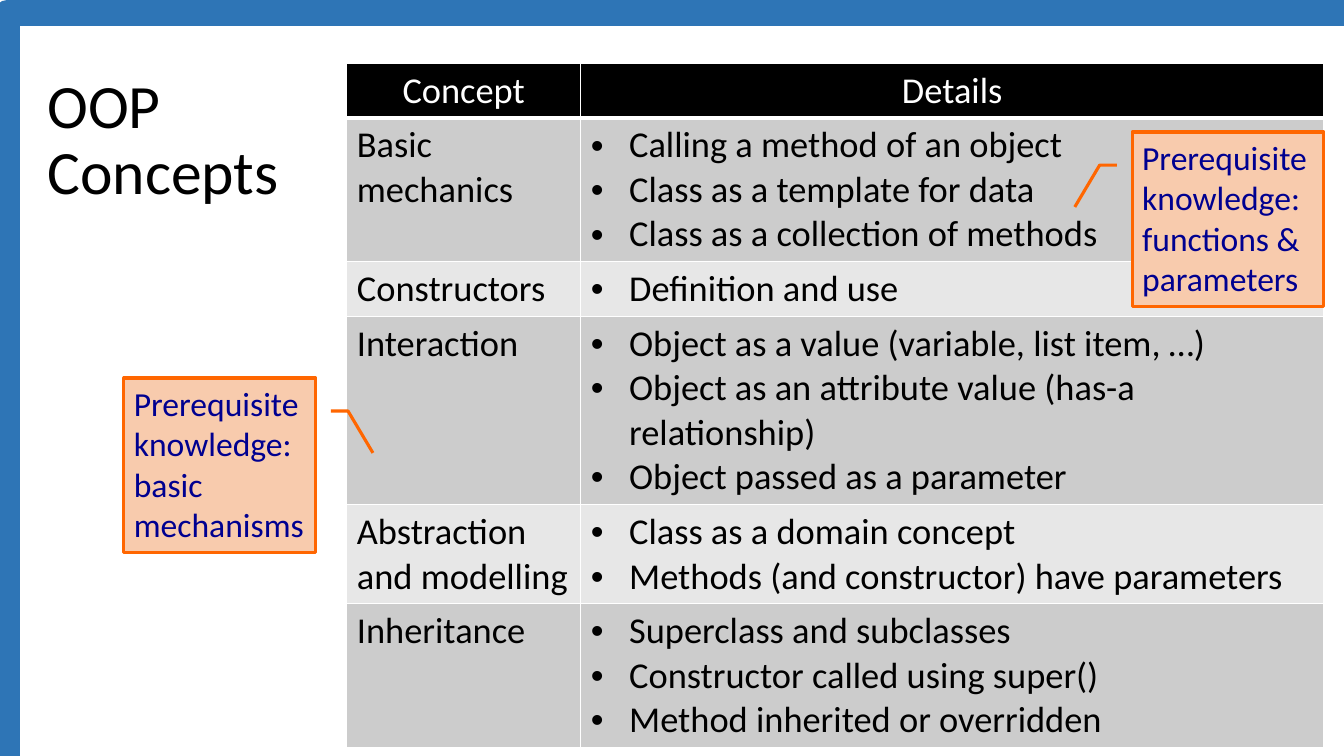
import dataclasses
import typing

import lxml.etree
import pptx
import pptx.dml.color
import pptx.enum.shapes
import pptx.enum.text
import pptx.oxml.ns
import pptx.util

Inches = pptx.util.Inches
Align = pptx.enum.text.PP_ALIGN
Anchor = pptx.enum.text.MSO_ANCHOR
Shape = pptx.enum.shapes.MSO_SHAPE


@dataclasses.dataclass(frozen=True)
class Theme:
    font: str = "Calibri"
    title_size: int = 44
    table_size: int = 26
    callout_size: int = 24
    black: str = "000000"
    white: str = "FFFFFF"
    frame: str = "2E75B6"
    bands: tuple[str, str] = ("CCCCCC", "E7E7E7")
    callout_fill: str = "F8CBAD"
    callout_line: str = "FF6600"
    callout_text: str = "000090"


@dataclasses.dataclass(frozen=True)
class Concept:
    name: str
    details: tuple[str, ...]


@dataclasses.dataclass(frozen=True)
class Callout:
    text: str
    left: float
    top: float
    mirrored: bool = False


THEME = Theme()
CONCEPTS = (
    Concept("Basic mechanics", (
        "Calling a method of an object",
        "Class as a template for data",
        "Class as a collection of methods",
    )),
    Concept("Constructors", ("Definition and use",)),
    Concept("Interaction", (
        "Object as a value (variable, list item, …)",
        "Object as an attribute value (has-a relationship)",
        "Object passed as a parameter",
    )),
    Concept("Abstraction and modelling", (
        "Class as a domain concept",
        "Methods (and constructor) have parameters",
    )),
    Concept("Inheritance", (
        "Superclass and subclasses",
        "Constructor called using super()",
        "Method inherited or overridden",
    )),
)
CALLOUTS = (
    Callout("Prerequisite knowledge: functions & parameters", 11.23, 1.31),
    Callout("Prerequisite knowledge: basic mechanisms", 1.23, 3.75, mirrored=True),
)
CALLOUT_ADJUSTMENTS = (0.19, -0.08, 0.19, -0.17, 0.43, -0.3)
COLUMN_WIDTHS = (2.32, 7.37)
ROW_HEIGHT = 0.41


def rgb(value: str) -> pptx.dml.color.RGBColor:
    return pptx.dml.color.RGBColor.from_string(value)


def add_child(parent: typing.Any, tag: str, **attributes: str) -> typing.Any:
    return lxml.etree.SubElement(parent, pptx.oxml.ns.qn(tag), attributes)


def write_text(text_frame: typing.Any, lines: typing.Sequence[str], *, size: int,
               color: str, align: Align = Align.LEFT, bullet: bool = False,
               spacing: float = 1.0) -> None:
    for index, line in enumerate(lines):
        para = text_frame.paragraphs[0] if index == 0 else text_frame.add_paragraph()
        para.text = line
        para.alignment = align
        para.line_spacing = spacing
        if bullet:
            properties = para._p.get_or_add_pPr()
            properties.set("marL", str(Inches(0.38)))
            properties.set("indent", str(-Inches(0.38)))
            add_child(properties, "a:buFont", typeface="Arial")
            add_child(properties, "a:buChar", char="•")
        for span in para.runs:
            span.font.name = THEME.font
            span.font.size = pptx.util.Pt(size)
            span.font.color.rgb = rgb(color)


def style_cell(cell: typing.Any, fill: str, bottom: float = 1) -> None:
    properties = cell._tc.get_or_add_tcPr()
    for tag, width in (("a:lnL", 1), ("a:lnR", 1), ("a:lnT", 1), ("a:lnB", bottom)):
        border = add_child(properties, tag, w=str(pptx.util.Pt(width)))
        add_child(add_child(border, "a:solidFill"), "a:srgbClr", val=THEME.white)
    cell.fill.solid()
    cell.fill.fore_color.rgb = rgb(fill)


def add_frame(page: typing.Any) -> None:
    frame = page.shapes.add_shape(
        Shape.RECTANGLE, Inches(0.07), Inches(0.13), Inches(13.39), Inches(7.55))
    frame.shadow.inherit = False
    frame.fill.background()
    frame.line.color.rgb = rgb(THEME.frame)
    frame.line.width = pptx.util.Pt(18)
    page.shapes.title.element.addprevious(frame.element)


def add_title(page: typing.Any) -> None:
    title = page.shapes.title
    title.left, title.top = Inches(0.37), Inches(0.32)
    title.width, title.height = Inches(3.07), Inches(2.17)
    title.text_frame.word_wrap = True
    title.text_frame.auto_size = pptx.enum.text.MSO_AUTO_SIZE.NONE
    title.text_frame.vertical_anchor = Anchor.MIDDLE
    write_text(title.text_frame, ["OOP \vConcepts"], size=THEME.title_size,
               color=THEME.black, spacing=0.9)


def add_concept_table(page: typing.Any) -> None:
    graphic = page.shapes.add_table(
        len(CONCEPTS) + 1, len(COLUMN_WIDTHS), Inches(3.44), Inches(0.63),
        Inches(sum(COLUMN_WIDTHS)), Inches(6.67))
    table = graphic.table
    table.horz_banding = False
    for column, width in zip(table.columns, COLUMN_WIDTHS):
        column.width = Inches(width)
    for row in table.rows:
        row.height = Inches(ROW_HEIGHT)
    graphic.height = Inches(6.67)
    for column, heading in enumerate(("Concept", "Details")):
        cell = table.cell(0, column)
        style_cell(cell, THEME.black, bottom=3)
        cell.vertical_anchor = Anchor.MIDDLE
        write_text(cell.text_frame, [heading], size=THEME.table_size,
                   color=THEME.white, align=Align.CENTER)
    for index, concept in enumerate(CONCEPTS):
        for column, lines in enumerate(((concept.name,), concept.details)):
            cell = table.cell(index + 1, column)
            style_cell(cell, THEME.bands[index % 2])
            write_text(cell.text_frame, lines, size=THEME.table_size,
                       color=THEME.black, bullet=column == 1)


def add_callout(page: typing.Any, callout: Callout) -> None:
    box = page.shapes.add_shape(
        Shape.LINE_CALLOUT_2, Inches(callout.left), Inches(callout.top),
        Inches(1.9), Inches(1.73))
    for index, value in enumerate(CALLOUT_ADJUSTMENTS):
        box.adjustments[index] = value
    if callout.mirrored:
        box.element.spPr.xfrm.set("flipH", "1")
    box.shadow.inherit = False
    box.fill.solid()
    box.fill.fore_color.rgb = rgb(THEME.callout_fill)
    box.line.color.rgb = rgb(THEME.callout_line)
    box.line.width = pptx.util.Pt(2.25)
    box.text_frame.word_wrap = True
    box.text_frame.vertical_anchor = Anchor.TOP
    write_text(box.text_frame, [callout.text], size=THEME.callout_size,
               color=THEME.callout_text)


def main() -> None:
    deck = pptx.Presentation()
    deck.slide_width, deck.slide_height = Inches(13.33), Inches(7.5)
    page = deck.slides.add_slide(deck.slide_layouts.get_by_name("Title Only"))
    add_frame(page)
    add_title(page)
    add_concept_table(page)
    for callout in CALLOUTS:
        add_callout(page, callout)
    deck.save("out.pptx")


if __name__ == "__main__":
    main()
